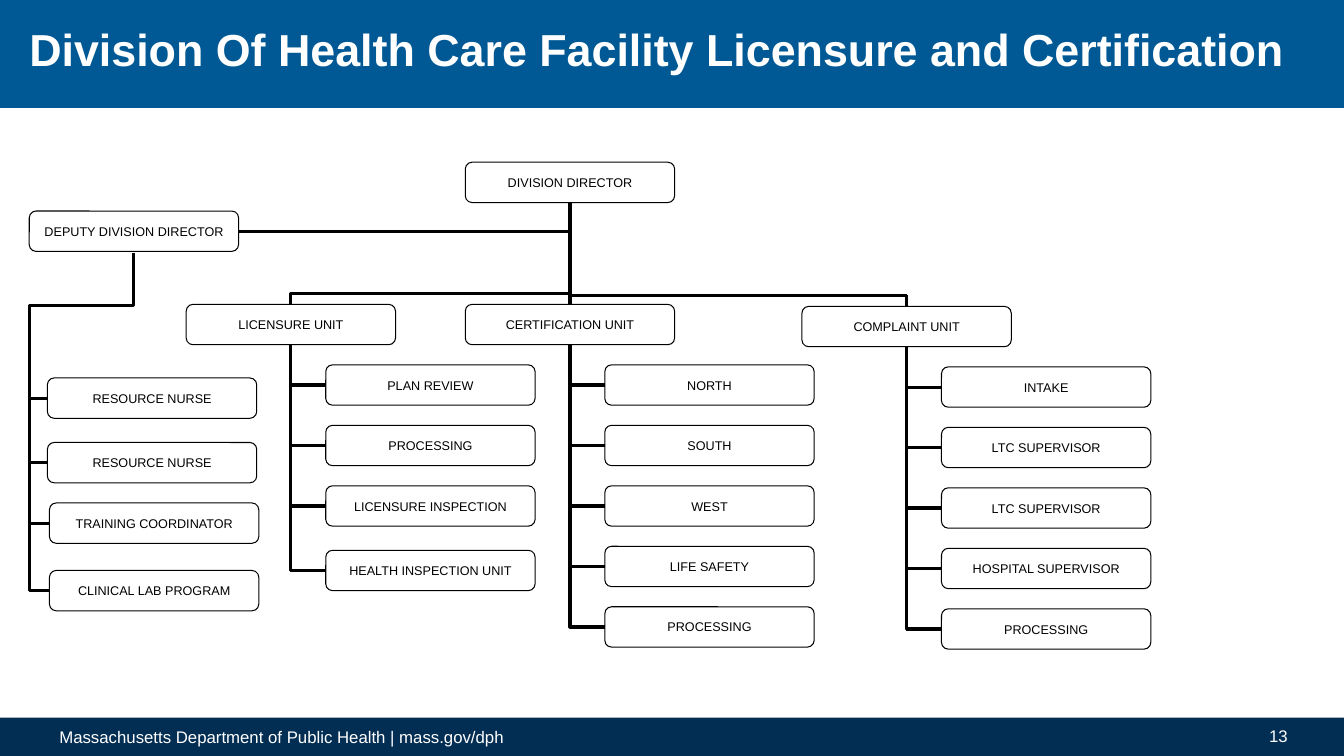
from dataclasses import dataclass

from lxml import etree
from pptx import Presentation
from pptx import util as u
from pptx.dml.color import RGBColor
from pptx.enum import shapes, text
from pptx.oxml.ns import qn

SLIDE_W, SLIDE_H = 13.33, 7.5
COLORS = {"header": "005994", "footer": "032E53", "light": "FFFFFF", "ink": "000000"}

# Chart grid: a box is 6 columns wide and 2 rows high.
LEFT, TOP, COL, ROW = 0.29, 1.61, 2.076 / 6, 0.2
BOX_COLS, BOX_ROWS = 6, 2
CHILD_INDENT, CHILD_PITCH = 4, 3

Point = tuple[float, float]


@dataclass
class Box:
    label: str
    col: float
    row: float

    @property
    def mid_col(self) -> float:
        return self.col + BOX_COLS / 2

    @property
    def mid_row(self) -> float:
        return self.row + BOX_ROWS / 2

    @property
    def bottom(self) -> float:
        return self.row + BOX_ROWS


@dataclass
class Unit:
    head: Box
    staff: list[Box]


def make_unit(label: str, col: float, row: float, names: list[str]) -> Unit:
    staff = [Box(name, col + CHILD_INDENT, row + CHILD_PITCH * i)
             for i, name in enumerate(names, 1)]
    return Unit(Box(label, col, row), staff)


DIRECTOR = Box("DIVISION DIRECTOR", 12.5, 0)
DEPUTY = Box("DEPUTY DIVISION DIRECTOR", 0, 2.42)
DEPUTY_STAFF = [
    Box("RESOURCE NURSE", 0.52, 10.7),
    Box("RESOURCE NURSE", 0.52, 13.9),
    Box("TRAINING COORDINATOR", 0.58, 16.9),
    Box("CLINICAL LAB PROGRAM", 0.58, 20.25),
]
DEPUTY_RISES = [2.6, 3, 3, 1.75]
LICENSURE = make_unit("LICENSURE UNIT", 4.5, 7.05, [
    "PLAN REVIEW", "PROCESSING", "LICENSURE INSPECTION", "HEALTH INSPECTION UNIT"])
LICENSURE.staff[-1].row = 19.25
CERTIFICATION = make_unit("CERTIFICATION UNIT", 12.5, 7.05, [
    "NORTH", "SOUTH", "WEST", "LIFE SAFETY", "PROCESSING"])
COMPLAINT = make_unit("COMPLAINT UNIT", 22.15, 7.15, [
    "INTAKE", "LTC SUPERVISOR", "LTC SUPERVISOR", "HOSPITAL SUPERVISOR", "PROCESSING"])
UNITS = [LICENSURE, CERTIFICATION, COMPLAINT]


def rgb(name: str) -> RGBColor:
    return RGBColor.from_string(COLORS[name])


def grid_x(col: float) -> int:
    return u.Inches(LEFT + COL * col)


def grid_y(row: float) -> int:
    return u.Inches(TOP + ROW * row)


def place(sp, left: float, top: float, width: float, height: float) -> None:
    box = {"left": left, "top": top, "width": width, "height": height}
    for name, value in box.items():
        setattr(sp, name, u.Inches(value))


def write(sp, words: str, size: float, color: str, align, bold: bool = False, **frame) -> None:
    """Fill a shape with one formatted paragraph; frame holds text frame settings."""
    tf = sp.text_frame
    for name, value in frame.items():
        setattr(tf, name, value)
    p = tf.paragraphs[0]
    p.alignment = align
    r = p.add_run()
    r.text = words
    for name, value in {"name": "Arial", "size": u.Pt(size), "bold": bold}.items():
        setattr(r.font, name, value)
    r.font.color.rgb = rgb(color)


def draw_band(s, top: float, height: float, color: str) -> None:
    sp = s.shapes.add_shape(shapes.MSO_SHAPE.RECTANGLE, 0, u.Inches(top),
                            u.Inches(SLIDE_W), u.Inches(height))
    sp.shadow.inherit = False
    sp.fill.solid()
    sp.fill.fore_color.rgb = rgb(color)
    sp.line.fill.background()


def draw_line(s, start: Point, end: Point, kind=shapes.MSO_CONNECTOR.STRAIGHT):
    line = s.shapes.add_connector(kind, grid_x(start[0]), grid_y(start[1]),
                                  grid_x(end[0]), grid_y(end[1]))
    line.line.width = u.Pt(2.25)
    line.line.color.rgb = rgb("ink")
    etree.SubElement(line._element.spPr, qn("a:effectLst"))
    return line


def draw_elbow(s, top_left: Point, bottom_right: Point, turn: int = 180,
               flips: str = "", bend: float | None = None) -> None:
    """Draw a one-corner elbow, or a two-corner one that turns at the share bend."""
    line = draw_line(s, top_left, bottom_right, shapes.MSO_CONNECTOR.ELBOW)
    if turn == 90:
        w, h = line.width, line.height
        line.left, line.top = line.left + (w - h) // 2, line.top + (h - w) // 2
        line.width, line.height = h, w
    xfrm = line._element.spPr.find(qn("a:xfrm"))
    xfrm.set("rot", str(turn * 60000))
    for flip in flips:
        xfrm.set("flip" + flip, "1")
    geom = line._element.spPr.find(qn("a:prstGeom"))
    if bend is None:
        geom.set("prst", "bentConnector2")
    else:
        guides = geom.find(qn("a:avLst"))
        etree.SubElement(guides, qn("a:gd"), name="adj1", fmla=f"val {round(bend * 100000)}")


def draw_box(s, box: Box) -> None:
    sp = s.shapes.add_shape(shapes.MSO_SHAPE.ROUNDED_RECTANGLE, grid_x(box.col), grid_y(box.row),
                            u.Inches(COL * BOX_COLS), u.Inches(ROW * BOX_ROWS))
    sp.adjustments[0] = 0.167
    sp.shadow.inherit = False
    sp.fill.background()
    sp.line.width = u.Pt(0.75)
    sp.line.color.rgb = rgb("ink")
    write(sp, box.label, 9, "ink", text.PP_ALIGN.CENTER, word_wrap=False,
          vertical_anchor=text.MSO_ANCHOR.MIDDLE,
          margin_left=0, margin_top=0, margin_right=0, margin_bottom=0)


def draw_unit(s, unit: Unit) -> None:
    for box in reversed(unit.staff):
        draw_elbow(s, (unit.head.mid_col, unit.head.bottom), (box.col, box.mid_row))
    for box in [unit.head, *unit.staff]:
        draw_box(s, box)


def draw_leadership(s) -> None:
    spine, branch = DIRECTOR.mid_col, COMPLAINT.head.mid_col
    draw_elbow(s, (DEPUTY.col + BOX_COLS, DIRECTOR.bottom), (spine, DEPUTY.mid_row),
               turn=0, flips="V")
    draw_line(s, (spine, CERTIFICATION.head.row), (spine, DIRECTOR.bottom))
    draw_elbow(s, (LICENSURE.head.mid_col, 6.5), (spine, LICENSURE.head.row),
               turn=90, flips="HV")
    draw_line(s, (spine, 6.6), (branch, 6.6))
    draw_line(s, (branch, 6.6), (branch, COMPLAINT.head.row))
    for box in (DIRECTOR, DEPUTY):
        draw_box(s, box)


def draw_deputy_staff(s) -> None:
    draw_elbow(s, (DEPUTY.col, 4.5), (DEPUTY.mid_col, 19.6), turn=90, flips="HV", bend=0.826)
    for box, rise in zip(DEPUTY_STAFF, DEPUTY_RISES):
        draw_elbow(s, (DEPUTY.col, box.mid_row - rise), (box.col, box.mid_row))
        draw_box(s, box)


def draw_frame(s) -> None:
    """Draw the header and footer bands with their text."""
    draw_band(s, 0, 1.07, "header")
    draw_band(s, 7.12, 0.38, "footer")
    title = s.shapes.title
    s.shapes._spTree.append(title._element)
    place(title, 0.19, 0.04, 12.69, 0.96)
    write(title, "Division Of Health Care Facility Licensure and Certification", 32, "light",
          text.PP_ALIGN.LEFT, bold=True, vertical_anchor=text.MSO_ANCHOR.MIDDLE,
          word_wrap=True, auto_size=text.MSO_AUTO_SIZE.NONE)
    title.text_frame.paragraphs[0].line_spacing = 0.9
    source = s.shapes.add_textbox(0, 0, 0, 0)
    place(source, 0.49, 7.16, 5.51, 0.3)
    write(source, "Massachusetts Department of Public Health | mass.gov/dph", 12, "light",
          text.PP_ALIGN.LEFT, word_wrap=True)
    number = s.shapes.add_textbox(0, 0, 0, 0)
    place(number, 9.88, 7.1, 2.99, 0.4)
    write(number, "13", 12, "light", text.PP_ALIGN.RIGHT, word_wrap=True,
          vertical_anchor=text.MSO_ANCHOR.MIDDLE)


def main() -> None:
    prs = Presentation()
    prs.slide_width, prs.slide_height = u.Inches(SLIDE_W), u.Inches(SLIDE_H)
    s = prs.slides.add_slide(prs.slide_layouts.get_by_name("Title Only"))
    draw_frame(s)
    draw_leadership(s)
    for unit in UNITS:
        draw_unit(s, unit)
    draw_deputy_staff(s)
    prs.save("out.pptx")


if __name__ == "__main__":
    main()
